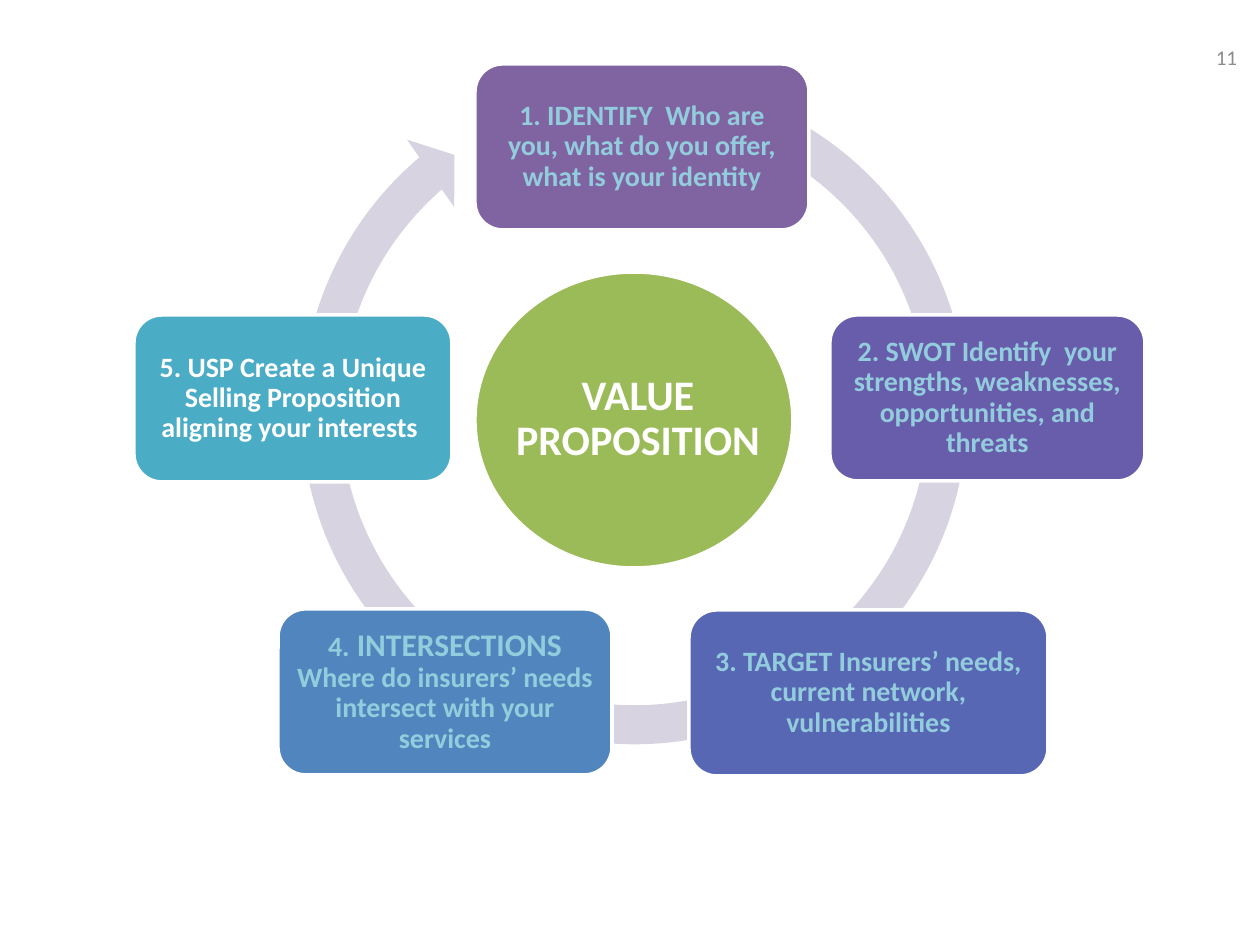
import pptx
import pptx.util
import pptx.dml.color
import pptx.enum.shapes
import pptx.enum.text

PX = 914400 // 126  # EMU per px
FONT = "Calibri"
COLORS = {
    "ring": "D8D3E0", "purple": "8064A2", "violet": "685DAB", "indigo": "5767B4",
    "blue": "5185BD", "teal": "4BACC6", "green": "9BBB59",
    "pale": "93CDDD", "white": "FFFFFF", "gray": "8C8C8C",
}

# Steps: box (left, top, width, height), fill, text colour, runs (text, size)
STEPS = [
    ((475, 64, 334, 166), "purple", "pale",
     [("1. IDENTIFY  Who are you, what do you offer, what is your identity", 16)]),
    ((830, 315, 315, 166), "violet", "pale",
     [("2. SWOT Identify  your strengths, weaknesses, opportunities, and threats", 16)]),
    ((689, 610, 359, 166), "indigo", "pale",
     [("3. TARGET Insurers’ needs, current network, vulnerabilities", 16)]),
    ((278, 609, 334, 166), "blue", "pale",
     [("4.", 16), (" INTERSECTIONS ", 18),
      ("Where do insurers’ needs intersect with your services", 16)]),
    ((134, 315, 318, 167), "teal", "white",
     [("5. USP Create a Unique Selling Proposition aligning your interests ", 16)]),
]
RING = (280, 57, 709, 709)
RING_ADJUSTMENTS = (0.055, 3.31, 137.66, 173.92, 0.058)
CENTER = (475, 272, 318, 296)
CENTER_TEXT = (507, 315, 262, 209)
PAGE_NUMBER = (955, 32, 294, 50)

SHAPE = pptx.enum.shapes.MSO_SHAPE
ALIGN = pptx.enum.text.PP_ALIGN


def rgb(name):
    return pptx.dml.color.RGBColor.from_string(COLORS[name])


def emu(box):
    return [v * PX for v in box]


def add_shape(kind, box, fill, outlined=True):
    sp = slide.shapes.add_shape(kind, *emu(box))
    sp.shadow.inherit = False
    sp.fill.solid()
    sp.fill.fore_color.rgb = rgb(fill)
    if outlined:
        sp.line.color.rgb = rgb("white")
        sp.line.width = pptx.util.Pt(2)
    else:
        sp.line.fill.background()
    return sp


def write(sp, runs, color, inset, bold=True, align=ALIGN.CENTER, spacing=0.9):
    tf = sp.text_frame
    tf.word_wrap = True
    tf.vertical_anchor = pptx.enum.text.MSO_ANCHOR.MIDDLE
    tf.margin_left = tf.margin_right = inset * PX
    tf.margin_top = tf.margin_bottom = inset * PX
    p = tf.paragraphs[0]
    p.alignment = align
    p.line_spacing = spacing
    for text, size in runs:
        r = p.add_run()
        r.text = text
        r.font.name = FONT
        r.font.size = pptx.util.Pt(size)
        r.font.bold = bold
        r.font.color.rgb = rgb(color)


prs = pptx.Presentation()
prs.slide_width = pptx.util.Inches(10)
prs.slide_height = pptx.util.Inches(7.5)
slide = prs.slides.add_slide(prs.slide_layouts[6])

# Circular arrow behind the steps
ring = add_shape(SHAPE.CIRCULAR_ARROW, RING, "ring", outlined=False)
for i, value in enumerate(RING_ADJUSTMENTS):
    ring.adjustments[i] = value

# Five steps
for box, fill, color, runs in STEPS:
    sp = add_shape(SHAPE.ROUNDED_RECTANGLE, box, fill)
    write(sp, runs, color, inset=9)

# Centre; its label is wider than the text area of an ellipse
add_shape(SHAPE.OVAL, CENTER, "green")
label = slide.shapes.add_textbox(*emu(CENTER_TEXT))
write(label, [("VALUE PROPOSITION", 24)], "white", inset=3)

# Page number
number = slide.shapes.add_textbox(*emu(PAGE_NUMBER))
write(number, [("11", 12)], "gray", inset=12, bold=False, align=ALIGN.RIGHT, spacing=1.0)

prs.save("out.pptx")
